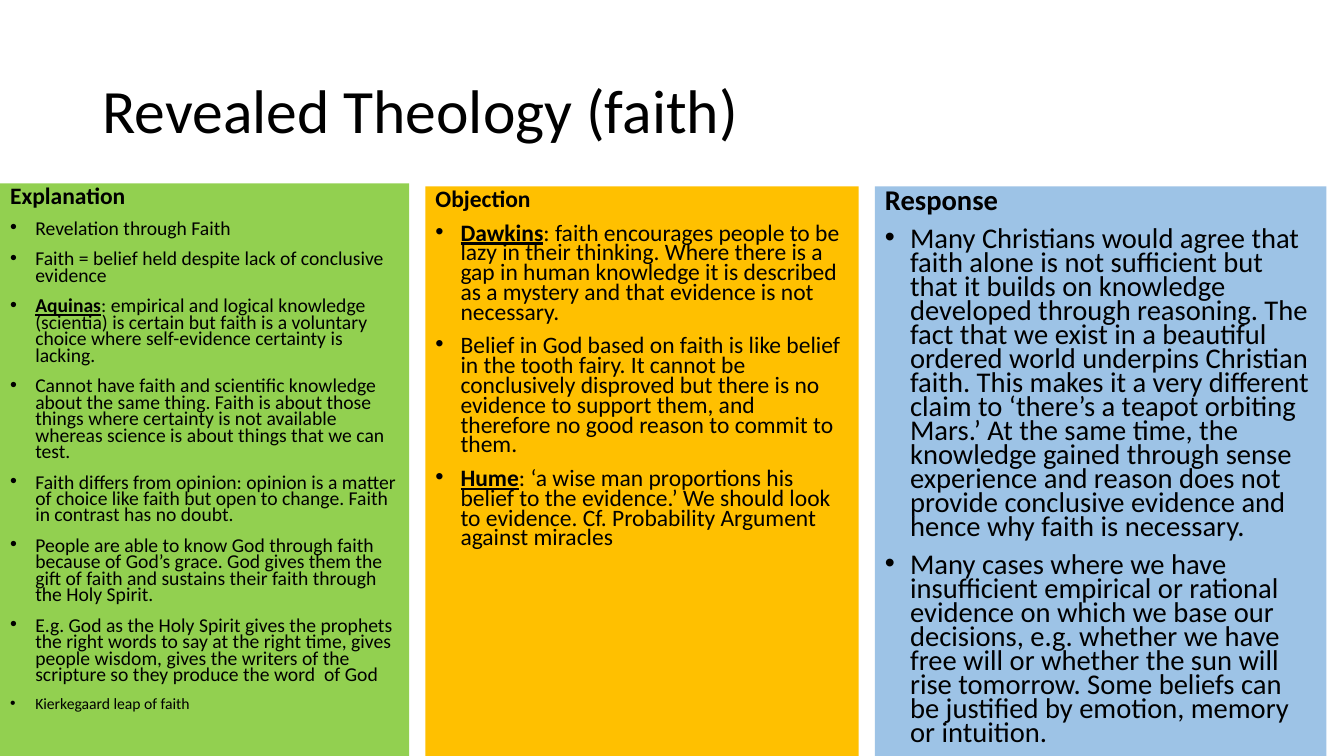
from dataclasses import dataclass
from pptx import Presentation
from pptx.dml.color import RGBColor as Rgb
from pptx.enum.text import MSO_ANCHOR as Anchor, MSO_AUTO_SIZE as Fit, PP_ALIGN as Align
from pptx.oxml.xmlchemy import OxmlElement as Tag
from pptx.util import Pt


@dataclass(frozen=True)
class Theme:
    font: str = "Calibri"
    ink: str = "000000"
    green: str = "92D050"
    amber: str = "FFC000"
    blue: str = "9DC3E6"
    title: float = 44
    large: float = 20.4
    medium: float = 16.8
    small: float = 14
    tiny: float = 11.2
    lead: float = 0.7
    gap: float = 10
    indent: float = 18


theme = Theme()

EXPLAIN = [
    ("", "Revelation through Faith"),
    ("", "Faith = belief held despite lack of conclusive evidence"),
    ("Aquinas", ": empirical and logical knowledge (scientia) is certain but faith is a "
     "voluntary choice where self-evidence certainty is lacking."),
    ("", "Cannot have faith and scientific knowledge about the same thing. Faith is about "
     "those things where certainty is not available whereas science is about things that "
     "we can test."),
    ("", "Faith differs from opinion: opinion is a matter of choice like faith but open to "
     "change. Faith in contrast has no doubt."),
    ("", "People are able to know God through faith because of God’s grace. God gives them "
     "the gift of faith and sustains their faith through the Holy Spirit."),
    ("", "E.g. God as the Holy Spirit gives the prophets the right words to say at the right "
     "time, gives people wisdom, gives the writers of the scripture so they produce the "
     "word  of God"),
    ("", "Kierkegaard leap of faith"),
]
OBJECT = [
    ("Dawkins", ": faith encourages people to be lazy in their thinking. Where there is a gap "
     "in human knowledge it is described as a mystery and that evidence is not necessary."),
    ("", "Belief in God based on faith is like belief in the tooth fairy. It cannot be "
     "conclusively disproved but there is no evidence to support them, and therefore no "
     "good reason to commit to them."),
    ("Hume", ": ‘a wise man proportions his belief to the evidence.’ We should look to "
     "evidence. Cf. Probability Argument against miracles"),
]
RESPOND = [
    ("", "Many Christians would agree that faith alone is not sufficient but that it builds "
     "on knowledge developed through reasoning. The fact that we exist in a beautiful "
     "ordered world underpins Christian faith. This makes it a very different claim to "
     "‘there’s a teapot orbiting Mars.’ At the same time, the knowledge gained through "
     "sense experience and reason does not provide conclusive evidence and hence why faith "
     "is necessary."),
    ("", "Many cases where we have insufficient empirical or rational evidence on which we "
     "base our decisions, e.g. whether we have free will or whether the sun will rise "
     "tomorrow. Some beliefs can be justified by emotion, memory or intuition."),
]


def place(shape, box):
    shape.left, shape.top, shape.width, shape.height = map(Pt, box)


def style(run, size, bold=False, under=False):
    font = run.font
    font.name, font.size = theme.font, Pt(size)
    font.bold, font.underline = bold, under
    font.color.rgb = Rgb.from_string(theme.ink)


def set_bullet(para, mark):
    props = para._p.get_or_add_pPr()
    indent = Pt(theme.indent) if mark else 0
    props.set("marL", str(indent))
    props.set("indent", str(-indent))
    bullet = Tag("a:buChar" if mark else "a:buNone")
    if mark:
        face = Tag("a:buFont")
        face.set("typeface", "Arial")
        props.append(face)
        bullet.set("char", mark)
    props.append(bullet)


def space(para):
    para.alignment = Align.LEFT
    para.line_spacing = theme.lead
    para.space_before, para.space_after = Pt(theme.gap), Pt(0)


def draw_title(shape, box, text):
    place(shape, box)
    frame = shape.text_frame
    frame.text = text
    frame.auto_size = Fit.NONE
    frame.vertical_anchor = Anchor.MIDDLE
    para = frame.paragraphs[0]
    para.alignment, para.line_spacing = Align.LEFT, 0.9
    style(para.runs[0], theme.title)


def draw_panel(shape, box, fill, head, items, sizes):
    place(shape, box)
    shape.fill.solid()
    shape.fill.fore_color.rgb = Rgb.from_string(fill)
    frame = shape.text_frame
    frame.text = head
    frame.word_wrap = True
    frame.auto_size = Fit.NONE
    frame.vertical_anchor = Anchor.TOP
    para = frame.paragraphs[0]
    space(para)
    set_bullet(para, "")
    style(para.runs[0], sizes[0], bold=True)
    for row, (name, text) in enumerate(items, 1):
        para = frame.add_paragraph()
        space(para)
        set_bullet(para, "•")
        size = sizes[min(row, len(items))] if len(sizes) > len(items) else sizes[1]
        for part, key in ((name, True), (text, False)):
            if part:
                run = para.add_run()
                run.text = part
                style(run, size, key, key)


def draw_slide(deck):
    slide = deck.slides.add_slide(deck.slide_layouts[3])
    title, left, mid = slide.placeholders
    right = slide.shapes.add_textbox(0, 0, 0, 0)
    draw_title(title, (66, 28.75, 828, 104.4), "Revealed Theology (faith)")
    small = [theme.medium] + [theme.small] * (len(EXPLAIN) - 1) + [theme.tiny]
    draw_panel(left, (0, 131, 292.2, 409), theme.green, "Explanation", EXPLAIN, small)
    draw_panel(mid, (303.8, 133.2, 309.5, 406.8), theme.amber, "Objection", OBJECT,
               [theme.medium] * 2)
    draw_panel(right, (625, 133.2, 322.4, 406.8), theme.blue, "Response", RESPOND,
               [theme.large] * 2)


def main():
    deck = Presentation()
    deck.slide_width, deck.slide_height = Pt(960), Pt(540)
    draw_slide(deck)
    deck.save("out.pptx")


if __name__ == "__main__":
    main()
